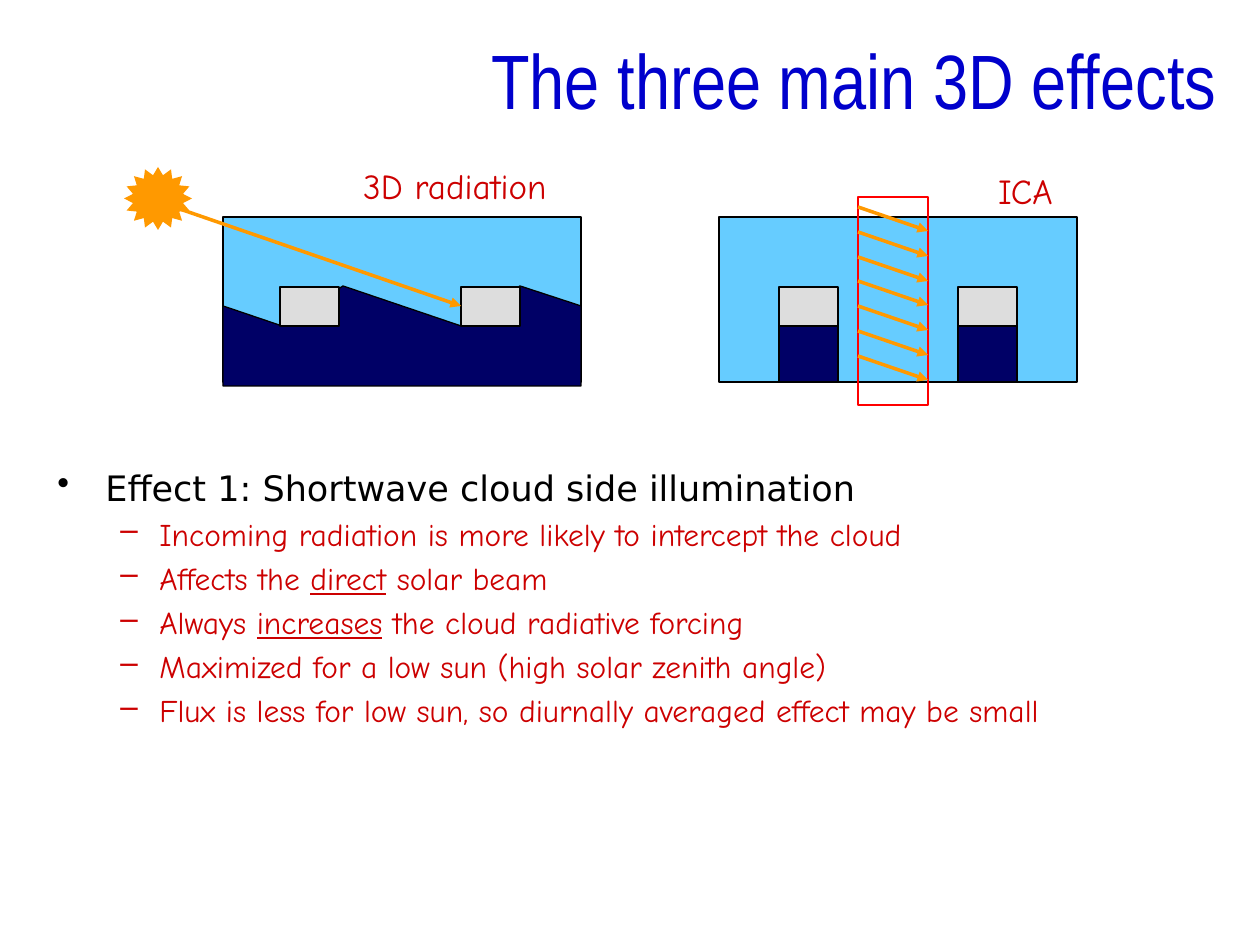
from lxml import etree
from pptx import Presentation
from pptx.dml.color import RGBColor
from pptx.enum.shapes import MSO_CONNECTOR, MSO_SHAPE
from pptx.enum.text import MSO_ANCHOR, MSO_AUTO_SIZE, PP_ALIGN
from pptx.oxml.ns import qn
from pptx.util import Pt

RECTANGLE = MSO_SHAPE.RECTANGLE
SUN = MSO_SHAPE.STAR_16_POINT
STRAIGHT = MSO_CONNECTOR.STRAIGHT
MIDDLE = MSO_ANCHOR.MIDDLE
NO_FIT, GROW = MSO_AUTO_SIZE.NONE, MSO_AUTO_SIZE.SHAPE_TO_FIT_TEXT
CENTER, RIGHT = PP_ALIGN.CENTER, PP_ALIGN.RIGHT

BLACK = RGBColor(0x00, 0x00, 0x00)
BLUE = RGBColor(0x00, 0x00, 0xCC)
SKY = RGBColor(0x66, 0xCC, 0xFF)
SHADOW = RGBColor(0x00, 0x00, 0x66)
CLOUD = RGBColor(0xDD, 0xDD, 0xDD)
ORANGE = RGBColor(0xFF, 0x99, 0x00)
RED = RGBColor(0xFF, 0x00, 0x00)
DARK_RED = RGBColor(0xCC, 0x00, 0x00)

SCALE = 914400 / 126

TITLE_FONT = {"name": "Arial Narrow", "size": Pt(44), "bold": False}
LABEL_FONT = {"name": "Comic Neue", "size": Pt(20)}
LEVELS = [
    {"bullet": "•", "margin": 48, "hanging": 48, "color": BLACK,
     "font": {"name": "DejaVu Sans", "size": Pt(20)}},
    {"bullet": "–", "margin": 102, "hanging": 39, "color": DARK_RED,
     "font": {"name": "Comic Neue", "size": Pt(18)}},
]
EFFECT_LINES = [
    (0, ["Effect 1: Shortwave cloud side illumination"]),
    (1, ["Incoming radiation is more likely to intercept the cloud"]),
    (1, ["Affects the ", "direct", " solar beam"]),
    (1, ["Always ", "increases", " the cloud radiative forcing"]),
    (1, ["Maximized for a low sun (high solar zenith angle)"]),
    (1, ["Flux is less for low sun, so diurnally averaged effect may be small"]),
]
SHADED_GROUND = [(343, 286), (461, 326), (520, 286), (581, 306),
                 (581, 386), (223, 386), (223, 306), (282, 326)]
SKY_TOP, SKY_WIDTH, SKY_HEIGHT = 217, 358, 165
CLOUD_TOP, CLOUD_WIDTH, CLOUD_HEIGHT = 287, 59, 39
COLUMN_LEFT, COLUMN_WIDTH = 858, 70
BEAM_COUNT, BEAM_TOP, BEAM_STEP, BEAM_DROP = 7, 207, 24.8, 24


def px(length):
    return round(length * SCALE)


def set_values(target, values):
    for name, value in values.items():
        setattr(target, name, value)


def style_run(run, font, color):
    set_values(run.font, font)
    run.font.color.rgb = color


def paint(shape, fill=None, line=None, width=0.75):
    shape.shadow.inherit = False
    if fill is None:
        shape.fill.background()
    else:
        shape.fill.solid()
        shape.fill.fore_color.rgb = fill
    if line is None:
        shape.line.fill.background()
    else:
        shape.line.color.rgb = line
        shape.line.width = Pt(width)


def add_block(slide, box, fill=None, line=BLACK, width=0.75, kind=RECTANGLE):
    block = slide.shapes.add_shape(kind, *map(px, box))
    paint(block, fill, line, width)
    return block


def add_beam(slide, start, end):
    beam = slide.shapes.add_connector(STRAIGHT, *map(px, start + end))
    beam.line.color.rgb = ORANGE
    beam.line.width = Pt(2)
    etree.SubElement(beam.line._get_or_add_ln(), qn("a:tailEnd"), type="triangle")
    etree.SubElement(beam._element.spPr, qn("a:effectLst"))


def add_label(slide, text, box):
    frame = slide.shapes.add_textbox(*map(px, box)).text_frame
    set_values(frame, {"word_wrap": False, "auto_size": GROW})
    paragraph = frame.paragraphs[0]
    paragraph.alignment = CENTER
    run = paragraph.add_run()
    run.text = text
    style_run(run, LABEL_FONT, DARK_RED)


def set_title(slide, text):
    title = slide.shapes.title
    set_values(title, {"left": px(33), "top": px(0),
                       "width": px(1197), "height": px(158)})
    set_values(title.text_frame, {"vertical_anchor": MIDDLE, "word_wrap": True,
                                  "auto_size": NO_FIT})
    paragraph = title.text_frame.paragraphs[0]
    paragraph.alignment = RIGHT
    run = paragraph.add_run()
    run.text = text
    style_run(run, TITLE_FONT, BLUE)


def set_bullet(paragraph, level):
    properties = paragraph._p.get_or_add_pPr()
    properties.set("marL", str(px(level["margin"])))
    properties.set("indent", str(-px(level["hanging"])))
    spacing = etree.SubElement(properties, qn("a:spcBef"))
    etree.SubElement(spacing, qn("a:spcPct"), val="20000")
    etree.SubElement(properties, qn("a:buChar"), char=level["bullet"])


def add_effect_list(slide, box):
    frame = slide.shapes.add_textbox(*map(px, box)).text_frame
    frame.word_wrap = True
    for index, (depth, pieces) in enumerate(EFFECT_LINES):
        paragraph = frame.add_paragraph() if index else frame.paragraphs[0]
        paragraph.level = depth
        level = LEVELS[depth]
        set_bullet(paragraph, level)
        for position, piece in enumerate(pieces):
            run = paragraph.add_run()
            run.text = piece
            style_run(run, level["font"], level["color"])
            if position == 1:
                run.font.underline = True


def add_sky(slide, left):
    add_block(slide, (left, SKY_TOP, SKY_WIDTH, SKY_HEIGHT), SKY)


def add_cloud(slide, left):
    add_block(slide, (left, CLOUD_TOP, CLOUD_WIDTH, CLOUD_HEIGHT), CLOUD)


def add_3d_panel(slide):
    add_sky(slide, 223)
    outline = slide.shapes.build_freeform(*SHADED_GROUND[0], scale=SCALE)
    outline.add_line_segments(SHADED_GROUND[1:], close=True)
    paint(outline.convert_to_shape(), SHADOW, BLACK)
    for left in (280, 461):
        add_cloud(slide, left)
    add_beam(slide, (174, 207), (461, 306))
    sun = add_block(slide, (124, 167, 68, 63), ORANGE, None, kind=SUN)
    sun.adjustments[0] = 0.375
    add_label(slide, "3D radiation", (341, 158, 228, 54))


def add_ica_panel(slide):
    add_sky(slide, 719)
    shadow_top = CLOUD_TOP + CLOUD_HEIGHT
    shadow_height = SKY_TOP + SKY_HEIGHT - shadow_top
    for left in (779, 958):
        add_cloud(slide, left)
        add_block(slide, (left, shadow_top, CLOUD_WIDTH, shadow_height), SHADOW)
    add_block(slide, (COLUMN_LEFT, 197, COLUMN_WIDTH, 208), None, RED, 1)
    for index in range(BEAM_COUNT):
        top = round(BEAM_TOP + index * BEAM_STEP)
        add_beam(slide, (COLUMN_LEFT, top),
                 (COLUMN_LEFT + COLUMN_WIDTH, top + BEAM_DROP))
    add_label(slide, "ICA", (980, 163, 91, 54))


def main():
    deck = Presentation()
    set_values(deck, {"slide_width": px(1260), "slide_height": px(945)})
    slide = deck.slides.add_slide(deck.slide_layouts[5])
    set_title(slide, "The three main 3D effects")
    add_3d_panel(slide)
    add_ica_panel(slide)
    add_effect_list(slide, (45, 460, 1192, 348))
    deck.save("out.pptx")


if __name__ == "__main__":
    main()
